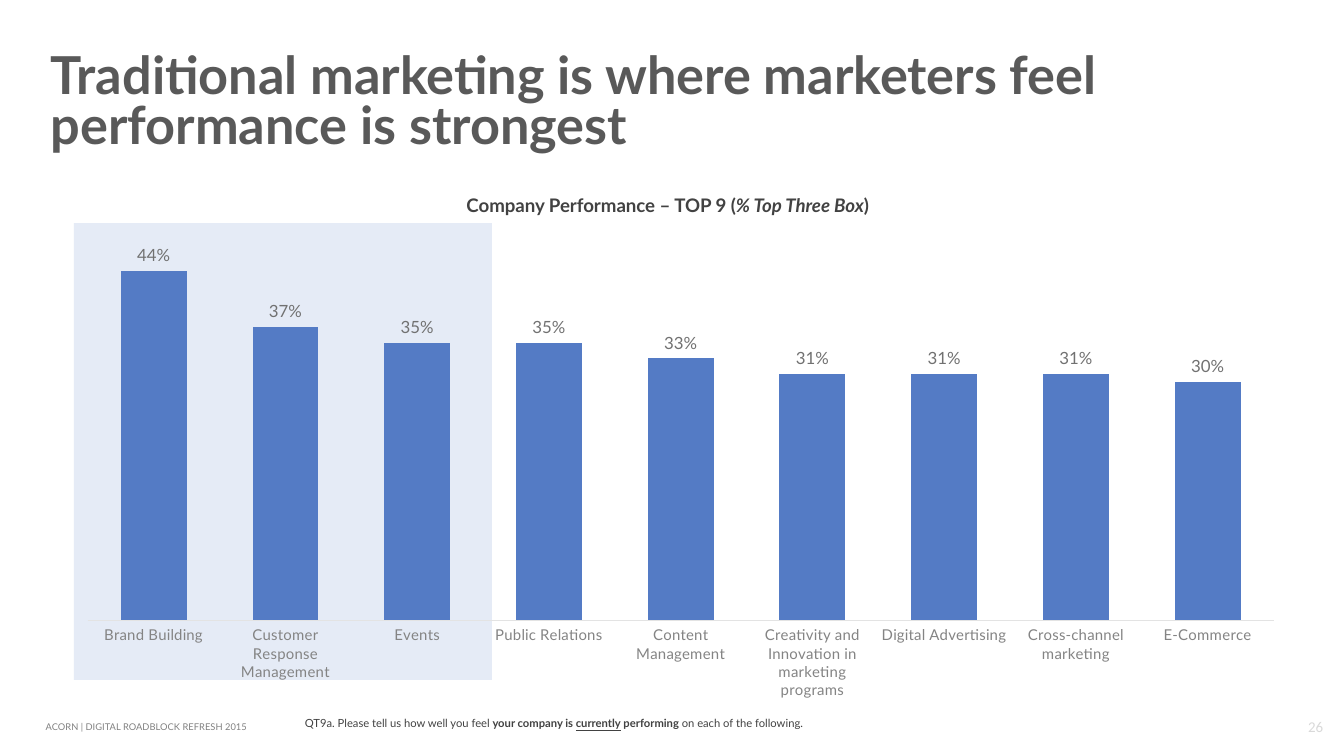
from dataclasses import dataclass

from lxml.etree import SubElement
from pptx import Presentation
from pptx.chart.data import CategoryChartData
from pptx.dml.color import RGBColor
from pptx.enum.chart import XL_CHART_TYPE, XL_LABEL_POSITION, XL_TICK_MARK
from pptx.enum.shapes import MSO_SHAPE
from pptx.enum.text import MSO_ANCHOR, PP_ALIGN
from pptx.oxml import parse_xml
from pptx.oxml.ns import nsdecls, qn
from pptx.util import Inches, Pt


@dataclass(frozen=True)
class Theme:
    font: str = "Lato"
    chart_font: str = "Cabin"
    number_font: str = "Calibri"
    heading: str = "595959"
    body: str = "424242"
    footer: str = "808080"
    page: str = "D9D9D9"
    bar: str = "547BC5"
    value: str = "717171"
    category: str = "848484"
    axis: str = "E3E3E3"
    highlight: str = "CCD8EE"
    title_size: float = 28
    subtitle_size: float = 10
    value_size: float = 9
    small_size: float = 8
    note_size: float = 6
    footer_size: float = 5


THEME = Theme()

PERFORMANCE = {
    "Brand Building": 0.44,
    "Customer Response Management": 0.37,
    "Events": 0.35,
    "Public Relations": 0.35,
    "Content Management": 0.33,
    "Creativity and Innovation in marketing programs": 0.31,
    "Digital Advertising": 0.31,
    "Cross-channel marketing": 0.31,
    "E-Commerce": 0.3,
}
PLOT_LAYOUT = {"x": 0.02, "y": 0.02, "w": 0.96, "h": 0.8}


def style_font(font, size, color, name=THEME.font, **flags):
    font.size = Pt(size)
    font.name = name
    font.color.rgb = RGBColor.from_string(color)
    for flag, state in flags.items():
        setattr(font, flag, state)


def add_run(paragraph, text, **style):
    run = paragraph.add_run()
    run.text = text
    style_font(run.font, **style)


class SlideBuilder:
    def __init__(self, slide, theme):
        self.slide = slide
        self.theme = theme

    def text(self, box, parts, size, color, align=PP_ALIGN.LEFT, anchor=MSO_ANCHOR.TOP,
             inset=True, line_spacing=None, **style):
        frame = self.slide.shapes.add_textbox(*map(Inches, box)).text_frame
        frame.word_wrap = True
        frame.vertical_anchor = anchor
        if not inset:
            frame.margin_left = frame.margin_right = 0
            frame.margin_top = frame.margin_bottom = 0
        paragraph = frame.paragraphs[0]
        paragraph.alignment = align
        if line_spacing:
            paragraph.line_spacing = line_spacing
        for wording, flags in parts:
            add_run(paragraph, wording, size=size, color=color, **style, **flags)

    def panel(self, box, color, opacity):
        panel = self.slide.shapes.add_shape(MSO_SHAPE.RECTANGLE, *map(Inches, box))
        panel.shadow.inherit = False
        panel.line.fill.background()
        panel.fill.solid()
        panel.fill.fore_color.rgb = RGBColor.from_string(color)
        tint = panel.fill._xPr.find(".//" + qn("a:srgbClr"))
        SubElement(tint, qn("a:alpha"), val=str(opacity * 1000))

    def columns(self, box, values, layout):
        theme = self.theme
        data = CategoryChartData(number_format="0%")
        data.categories = list(values)
        data.add_series("Series 1", list(values.values()))
        chart = self.slide.shapes.add_chart(
            XL_CHART_TYPE.COLUMN_CLUSTERED, *map(Inches, box), data).chart
        chart.has_legend = False
        chart.has_title = False
        style_font(chart.font, theme.subtitle_size, theme.body, theme.chart_font)

        plot = chart.plots[0]
        plot.gap_width = 100
        plot.vary_by_categories = False
        fill = plot.series[0].format.fill
        fill.solid()
        fill.fore_color.rgb = RGBColor.from_string(theme.bar)

        labels = plot.series[0].data_labels
        labels.show_value = True
        labels.number_format = "0%"
        labels.number_format_is_linked = False
        labels.position = XL_LABEL_POSITION.OUTSIDE_END
        style_font(labels.font, theme.value_size, theme.value)

        categories = chart.category_axis
        categories.major_tick_mark = XL_TICK_MARK.NONE
        categories.format.line.width = Pt(0.75)
        categories.format.line.color.rgb = RGBColor.from_string(theme.axis)
        style_font(categories.tick_labels.font, theme.small_size, theme.category)

        scale = chart.value_axis
        scale.minimum_scale, scale.maximum_scale = 0, 0.5
        scale.has_major_gridlines = False
        scale.tick_labels.number_format = "0%"
        scale.tick_labels.number_format_is_linked = False
        scale.visible = False
        self.place_plot(chart, layout)

    def place_plot(self, chart, layout):
        chart_part = chart._chartSpace.find(qn("c:chart"))
        chart_part.addnext(parse_xml(
            f'<c:spPr {nsdecls("c", "a")}><a:noFill/><a:ln><a:noFill/></a:ln></c:spPr>'))
        area = chart_part.find(qn("c:plotArea"))
        for automatic in area.findall(qn("c:layout")):
            area.remove(automatic)
        edges = "".join(f'<c:{side}Mode val="edge"/>' for side in "xy")
        sizes = "".join(f'<c:{side} val="{share}"/>' for side, share in layout.items())
        area.insert(0, parse_xml(
            f'<c:layout {nsdecls("c")}><c:manualLayout><c:layoutTarget val="inner"/>'
            f'{edges}{sizes}</c:manualLayout></c:layout>'))


def main():
    deck = Presentation()
    deck.slide_width = Inches(10)
    deck.slide_height = Inches(10 * 9 / 16)
    builder = SlideBuilder(deck.slides.add_slide(deck.slide_layouts[6]), THEME)

    builder.text((9.65, 5.34, 0.28, 0.13), [("26", {})], THEME.small_size, THEME.page,
                 align=PP_ALIGN.CENTER, anchor=MSO_ANCHOR.BOTTOM, inset=False,
                 name=THEME.number_font)
    builder.text((0.34, 5.37, 4.16, 0.08), [("ACORN | DIGITAL ROADBLOCK REFRESH 2015", {})],
                 THEME.footer_size, THEME.footer, anchor=MSO_ANCHOR.MIDDLE, inset=False)
    builder.panel((0.55, 1.66, 3.11, 3.4), THEME.highlight, opacity=50)
    builder.columns((0.47, 1.59, 9.19, 3.69), PERFORMANCE, PLOT_LAYOUT)
    builder.text((0.28, 0.3, 9.5, 0.95),
                 [("Traditional marketing is where marketers feel performance is strongest", {})],
                 THEME.title_size, THEME.heading, anchor=MSO_ANCHOR.MIDDLE,
                 line_spacing=0.8, bold=True)
    builder.text((2.17, 5.28, 6.02, 0.2), [
        ("QT9a. Please tell us how well you feel ", {}),
        ("your company is ", {"bold": True}),
        ("currently", {"bold": True, "underline": True}),
        (" performing", {"bold": True}),
        (" on each of the following.", {}),
    ], THEME.note_size, THEME.body)
    builder.text((0.95, 1.44, 8.07, 0.17), [
        ("Company Performance – TOP 9 (", {}),
        ("% Top Three Box", {"italic": True}),
        (") ", {}),
    ], THEME.subtitle_size, THEME.body, align=PP_ALIGN.CENTER, inset=False, bold=True)

    deck.save("out.pptx")


if __name__ == "__main__":
    main()
